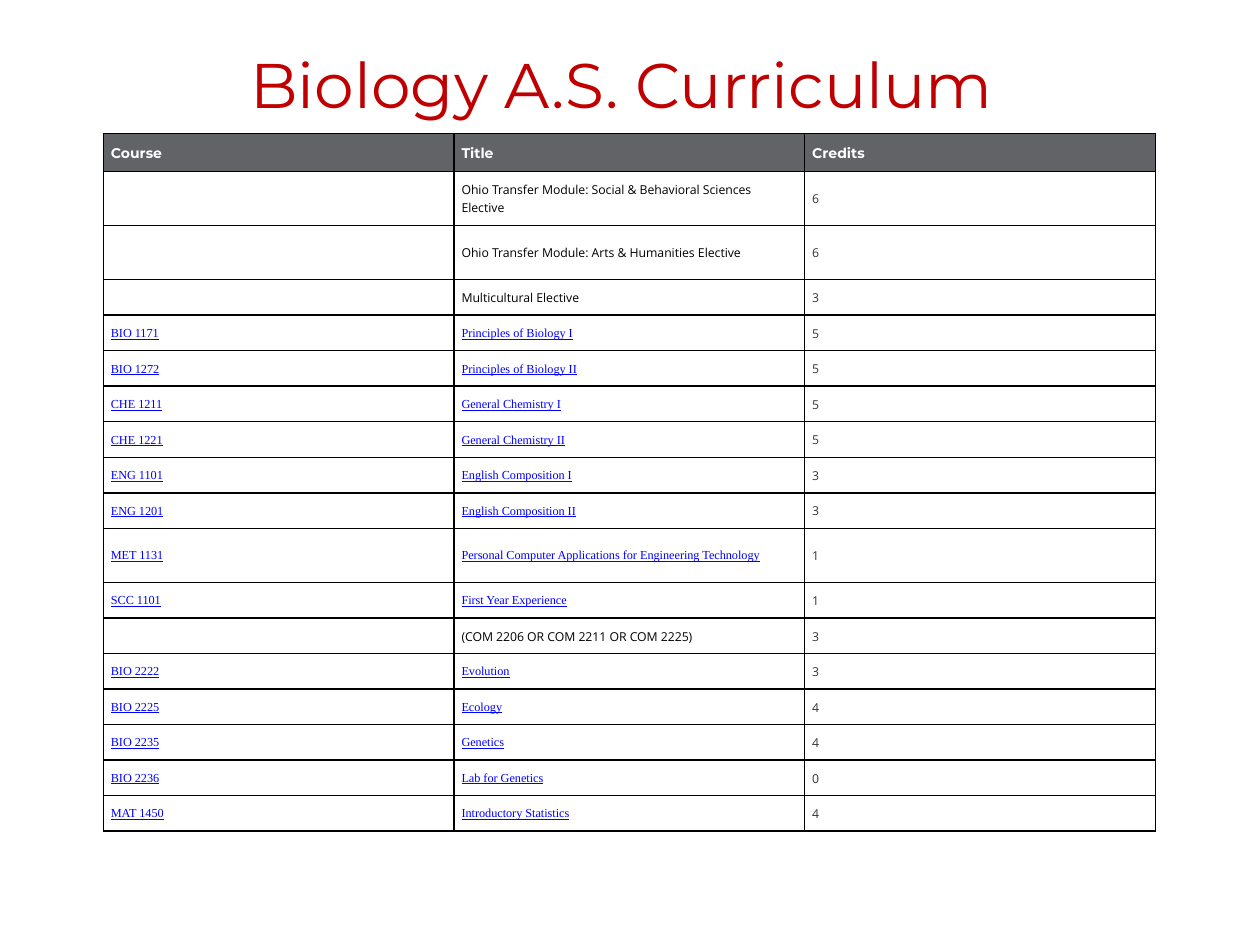
from lxml.etree import SubElement
from pptx import Presentation
from pptx.dml.color import RGBColor
from pptx.enum.text import MSO_ANCHOR, PP_ALIGN
from pptx.oxml.ns import qn
from pptx.util import Inches, Pt

COLORS = {
    "title": "C00000",
    "header": "616366",
    "header_text": "FFFFFF",
    "border": "000000",
    "text": "000000",
    "credits": "333333",
    "link": "0000FF",
}

HEADINGS = ("Course", "Title", "Credits")
COURSES = [
    ("", "Ohio Transfer Module: Social & Behavioral Sciences Elective", 6),
    ("", "Ohio Transfer Module: Arts & Humanities Elective", 6),
    ("", "Multicultural Elective", 3),
    ("BIO 1171", "Principles of Biology I", 5),
    ("BIO 1272", "Principles of Biology II", 5),
    ("CHE 1211", "General Chemistry I", 5),
    ("CHE 1221", "General Chemistry II", 5),
    ("ENG 1101", "English Composition I", 3),
    ("ENG 1201", "English Composition II", 3),
    ("MET 1131", "Personal Computer Applications for Engineering Technology", 1),
    ("SCC 1101", "First Year Experience", 1),
    ("", "(COM 2206 OR COM 2211 OR COM 2225)", 3),
    ("BIO 2222", "Evolution", 3),
    ("BIO 2225", "Ecology", 4),
    ("BIO 2235", "Genetics", 4),
    ("BIO 2236", "Lab for Genetics", 0),
    ("MAT 1450", "Introductory Statistics", 4),
]

TABLE_WIDTH, TABLE_HEIGHT = 8.35, 5.54
HEADER_HEIGHT, TALL_HEIGHT = 0.3, 0.43
TALL_ROWS = (1, 2, 10)

HEADER_STYLE = {"size": 8, "font": "Montserrat", "color": "header_text", "bold": True}
LINK_STYLE = {"font": "Times New Roman", "color": "link", "underline": True}
PLAIN_STYLE = {"color": "text"}
CREDITS_STYLE = {"color": "credits"}


def write_text(frame, text, size=7, font="Open Sans", color="text", bold=False,
               underline=False, align=PP_ALIGN.LEFT, spacing=1.0):
    para = frame.paragraphs[0]
    para.alignment = align
    para.line_spacing = spacing
    if not text:
        # Keep an empty cell from growing to the default text size
        SubElement(para._p, qn("a:endParaRPr"), sz=str(size * 100))
        return
    span = para.add_run()
    span.text = text
    span.font.size = Pt(size)
    span.font.name = font
    span.font.bold = bold
    span.font.underline = underline
    span.font.color.rgb = RGBColor.from_string(COLORS[color])


def add_borders(cell, width=1):
    properties = cell._tc.get_or_add_tcPr()
    for position, side in enumerate(("a:lnL", "a:lnR", "a:lnT", "a:lnB")):
        line = properties.makeelement(qn(side), {"w": str(Pt(width))})
        properties.insert(position, line)
        fill = SubElement(line, qn("a:solidFill"))
        SubElement(fill, qn("a:srgbClr"), val=COLORS["border"])


def format_cell(cell, text, fill=None, **style):
    cell.vertical_anchor = MSO_ANCHOR.MIDDLE
    cell.margin_left = cell.margin_right = Inches(0.06)
    cell.margin_top = cell.margin_bottom = Inches(0.06)
    if fill:
        cell.fill.solid()
        cell.fill.fore_color.rgb = RGBColor.from_string(COLORS[fill])
    else:
        cell.fill.background()
    add_borders(cell)
    write_text(cell.text_frame, text, spacing=1.07, **style)


def add_title(page, text):
    title = page.shapes.title
    title.left, title.top = Inches(0.5), Inches(0.04)
    title.width, title.height = Inches(9), Inches(1.25)
    title.text_frame.vertical_anchor = MSO_ANCHOR.MIDDLE
    write_text(title.text_frame, text, size=36, font="Montserrat",
               color="title", align=PP_ALIGN.CENTER)


def add_course_table(page):
    row_count = len(COURSES) + 1
    table = page.shapes.add_table(
        row_count, len(HEADINGS), Inches(0.82), Inches(1.06),
        Inches(TABLE_WIDTH), Inches(TABLE_HEIGHT)).table
    table.first_row = table.horz_banding = False

    # Ordinary rows share the height left by the header and the tall rows
    remaining = TABLE_HEIGHT - HEADER_HEIGHT - TALL_HEIGHT * len(TALL_ROWS)
    row_height = remaining / (len(COURSES) - len(TALL_ROWS))
    for index, row in enumerate(table.rows):
        row.height = Inches(TALL_HEIGHT if index in TALL_ROWS else row_height)
    table.rows[0].height = Inches(HEADER_HEIGHT)

    # Header row
    for column, heading in enumerate(HEADINGS):
        format_cell(table.cell(0, column), heading, fill="header", **HEADER_STYLE)

    # Course rows: those with a course code look like links
    for row, (code, name, credits) in enumerate(COURSES, start=1):
        style = LINK_STYLE if code else PLAIN_STYLE
        format_cell(table.cell(row, 0), code, **style)
        format_cell(table.cell(row, 1), name, **style)
        format_cell(table.cell(row, 2), str(credits), **CREDITS_STYLE)


def main():
    deck = Presentation()
    deck.slide_width, deck.slide_height = Inches(10), Inches(7.5)
    page = deck.slides.add_slide(deck.slide_layouts[5])
    add_title(page, "Biology A.S. Curriculum ")
    add_course_table(page)
    deck.save("out.pptx")


if __name__ == "__main__":
    main()
